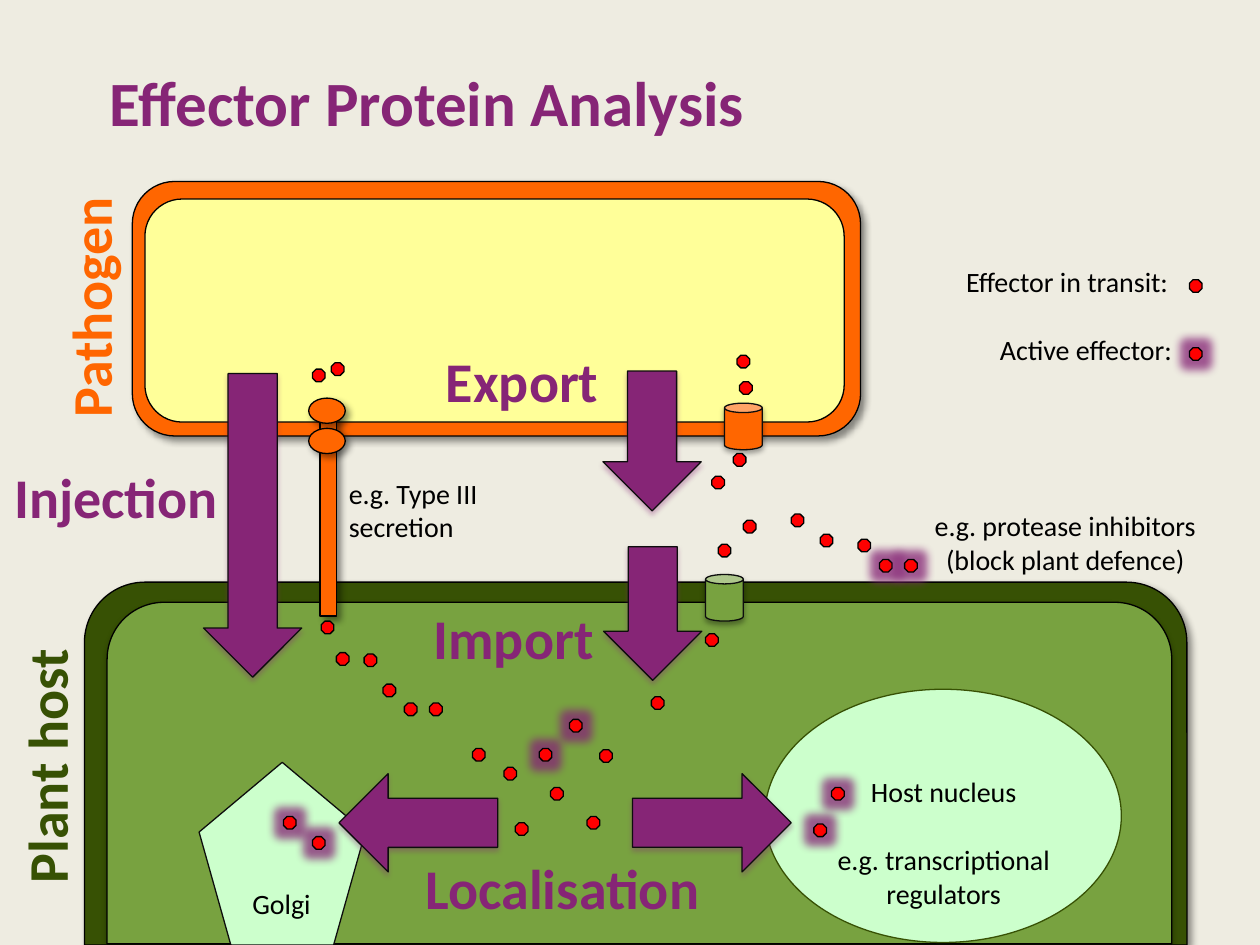
from dataclasses import dataclass

from lxml import etree
from pptx import Presentation
from pptx import util as u
from pptx.dml.color import RGBColor
from pptx.enum import shapes, text
from pptx.oxml import ns

SHAPE = shapes.MSO_SHAPE
ALIGN = text.PP_ALIGN
ANCHOR = text.MSO_ANCHOR


@dataclass(frozen=True)
class Theme:
    font: str = "Calibri"
    backdrop: str = "EEECE1"
    purple: str = "862576"
    orange: str = "FF6600"
    yellow: str = "FFFF99"
    dark_green: str = "375104"
    green: str = "78A240"
    mint: str = "CCFFCC"
    red: str = "FF0000"
    black: str = "000000"
    ink: str = "0D0D0D"
    title_size: int = 36
    heading_size: int = 32
    note_size: int = 16
    line_width: float = 0.75
    dot: float = 0.1


THEME = Theme()
# Opacity in percent, blur and distance in points, direction in degrees
SIDE_SHADOW = (43, 4, 3, 45)
DROP_SHADOW = (35, 3.1, 1.8, 90)


def apply(target, values):
    for name, value in values.items():
        setattr(target, name, value)


class Diagram:
    def __init__(self, slide, theme):
        self.slide = slide
        self.theme = theme
        fill = slide.background.fill
        fill.solid()
        fill.fore_color.rgb = RGBColor.from_string(theme.backdrop)

    def fill_text(self, box, lines, size, color, aligns, bold=False, gap=0, **frame_format):
        """Fill a box with one paragraph per line; gap separates paragraphs in points."""
        frame = box.text_frame
        apply(frame, {"word_wrap": True, **frame_format})
        for index, (line, align) in enumerate(zip(lines, aligns)):
            para = frame.add_paragraph() if index else frame.paragraphs[0]
            para.alignment = align
            if index and gap:
                para.space_before = u.Pt(gap)
            span = para.add_run()
            span.text = line
            apply(span.font, {"name": self.theme.font, "size": u.Pt(size), "bold": bold})
            span.font.color.rgb = RGBColor.from_string(color)

    def title(self, words, at):
        box = self.slide.shapes.title
        apply(box, dict(zip(("left", "top", "width", "height"), map(u.Inches, at))))
        self.fill_text(box, [words], self.theme.title_size, self.theme.purple, [ALIGN.LEFT],
                       bold=True, margin_left=0, vertical_anchor=ANCHOR.MIDDLE)

    def textbox(self, at, rotation=0):
        box = self.slide.shapes.add_textbox(*map(u.Inches, at))
        box.rotation = rotation
        return box

    def heading(self, words, at, color, align=ALIGN.RIGHT, rotation=0):
        self.fill_text(self.textbox(at, rotation), [words], self.theme.heading_size, color,
                       [align], bold=True, vertical_anchor=ANCHOR.MIDDLE,
                       auto_size=text.MSO_AUTO_SIZE.SHAPE_TO_FIT_TEXT)

    def note(self, lines, at, *aligns):
        self.fill_text(self.textbox(at), lines, self.theme.note_size, self.theme.black,
                       aligns, gap=19.5, auto_size=text.MSO_AUTO_SIZE.SHAPE_TO_FIT_TEXT)

    def effect(self, shape, tag, color, opacity, **attributes):
        effects = shape._element.spPr.find(ns.qn("a:effectLst"))
        node = etree.SubElement(effects, ns.qn(tag), {k: str(v) for k, v in attributes.items()})
        tint = etree.SubElement(node, ns.qn("a:srgbClr"), val=color)
        etree.SubElement(tint, ns.qn("a:alpha"), val=str(opacity * 1000))

    def shape(self, kind, at, fill, line=None, shadow=None, shadow_color=None, rotation=0):
        shape = self.slide.shapes.add_shape(kind, *map(u.Inches, at))
        shape.rotation = rotation
        shape.shadow.inherit = False
        shape.fill.solid()
        shape.fill.fore_color.rgb = RGBColor.from_string(fill)
        shape.line.color.rgb = RGBColor.from_string(line or self.theme.black)
        shape.line.width = u.Pt(self.theme.line_width)
        if shadow:
            opacity, blur, distance, angle = shadow
            self.effect(shape, "a:outerShdw", shadow_color or self.theme.black, opacity,
                        blurRad=u.Pt(blur), dist=u.Pt(distance), dir=angle * 60000,
                        rotWithShape=0)
        return shape

    def arrow(self, at, rotation=0):
        self.shape(SHAPE.RIGHT_ARROW, at, self.theme.purple, self.theme.ink,
                   DROP_SHADOW, self.theme.purple, rotation)

    def effector(self, left, top, active=False):
        side = self.theme.dot
        dot = self.shape(SHAPE.OCTAGON, (left, top, side, side), self.theme.red)
        if active:
            self.effect(dot, "a:glow", self.theme.purple, 75, rad=u.Pt(10))


IN_TRANSIT = [
    # Injected through the secretion needle
    (2.63, 2.88), (2.48, 2.93), (2.55, 4.93), (2.67, 5.18), (2.89, 5.19), (3.04, 5.43),
    (3.21, 5.58), (3.41, 5.58), (3.75, 5.94), (4, 6.09), (4.09, 6.53),
    # Exported, then imported
    (5.85, 2.82), (5.87, 3.03), (5.82, 3.6), (5.65, 3.78), (5.9, 4.13), (5.7, 4.32),
    (5.6, 5.03), (5.17, 5.53), (4.76, 5.95), (4.37, 6.25), (4.66, 6.48),
    # Staying outside the host
    (6.28, 4.08), (6.51, 4.24), (6.81, 4.28),
    # Key
    (9.44, 2.22),
]
ACTIVE = [
    (6.98, 4.44), (7.18, 4.44), (4.28, 5.94), (4.52, 5.71), (2.25, 6.48), (2.48, 6.64),
    (6.46, 6.54), (6.6, 6.25), (9.44, 2.76),
]


def main():
    deck = Presentation()
    deck.slide_width, deck.slide_height = u.Inches(10), u.Inches(7.5)
    page = Diagram(deck.slides.add_slide(deck.slide_layouts[5]), THEME)
    t = THEME
    page.title("Effector Protein Analysis", (0.87, 0.44, 8.3, 0.72))

    # Host and pathogen cells
    host = SHAPE.ROUND_2_SAME_RECTANGLE
    page.shape(host, (0.67, 4.62, 8.75, 2.88), t.dark_green, shadow=SIDE_SHADOW)
    page.shape(host, (0.85, 4.78, 8.45, 2.71), t.green, shadow=DROP_SHADOW)
    pathogen = SHAPE.ROUNDED_RECTANGLE
    page.shape(pathogen, (1.05, 1.44, 5.78, 2.02), t.orange, shadow=SIDE_SHADOW)
    page.shape(pathogen, (1.15, 1.58, 5.55, 1.77), t.yellow)

    # Organelles
    page.shape(SHAPE.OVAL, (6.07, 5.47, 2.83, 2.01), t.mint, t.dark_green)
    page.shape(SHAPE.REGULAR_PENTAGON, (1.58, 6.05, 1.32, 1.45), t.mint, t.ink)

    # Secretion needle and membrane channels
    page.shape(SHAPE.RECTANGLE, (2.54, 3.26, 0.13, 1.63), t.orange, shadow=SIDE_SHADOW)
    for top in (3.16, 3.4):
        page.shape(SHAPE.OVAL, (2.45, top, 0.29, 0.2), t.orange, shadow=SIDE_SHADOW)
    for left, top, color in ((5.75, 3.2, t.orange), (5.6, 4.56, t.green)):
        page.shape(SHAPE.CAN, (left, top, 0.3, 0.37), color, t.ink, DROP_SHADOW)

    for left, top, length, rotation in (
        (0.8, 3.78, 2.41, 90),
        (4.62, 3.11, 1.11, 90),
        (4.65, 4.48, 1.06, 90),
        (5.02, 6.14, 1.26, 0),
        (2.69, 6.14, 1.26, 180),
    ):
        page.arrow((left, top, length, 0.78), rotation)

    for place in IN_TRANSIT:
        page.effector(*place)
    for place in ACTIVE:
        page.effector(*place, active=True)

    for words, left, top, width in (
        ("Export", 3.41, 2.7, 1.44),
        ("Import", 3.2, 4.74, 1.61),
        ("Injection", -0.01, 3.62, 1.84),
        ("Localisation", 2.99, 6.72, 2.66),
    ):
        page.heading(words, (left, top, width, 0.64), t.purple)
    page.heading("Pathogen", (-0.3, 2.12, 2.02, 0.64), t.orange, ALIGN.CENTER, 270)
    page.heading("Plant host", (-0.92, 5.76, 2.56, 0.64), t.dark_green, ALIGN.CENTER, 270)

    page.note(["e.g. Type III secretion"], (2.67, 3.73, 1.7, 0.64), ALIGN.LEFT)
    page.note(["e.g. protease inhibitors (block plant defence)"],
              (7.24, 3.99, 2.43, 0.64), ALIGN.CENTER)
    page.note(["Host nucleus", "e.g. transcriptional regulators"],
              (6.28, 6.1, 2.42, 1.18), ALIGN.CENTER, ALIGN.CENTER)
    page.note(["Golgi"], (1.75, 6.99, 0.97, 0.37), ALIGN.CENTER)
    page.note(["Effector in transit:", "Active effector:"],
              (7.57, 2.05, 1.83, 0.91), ALIGN.LEFT, ALIGN.RIGHT)
    deck.save("out.pptx")


if __name__ == "__main__":
    main()
